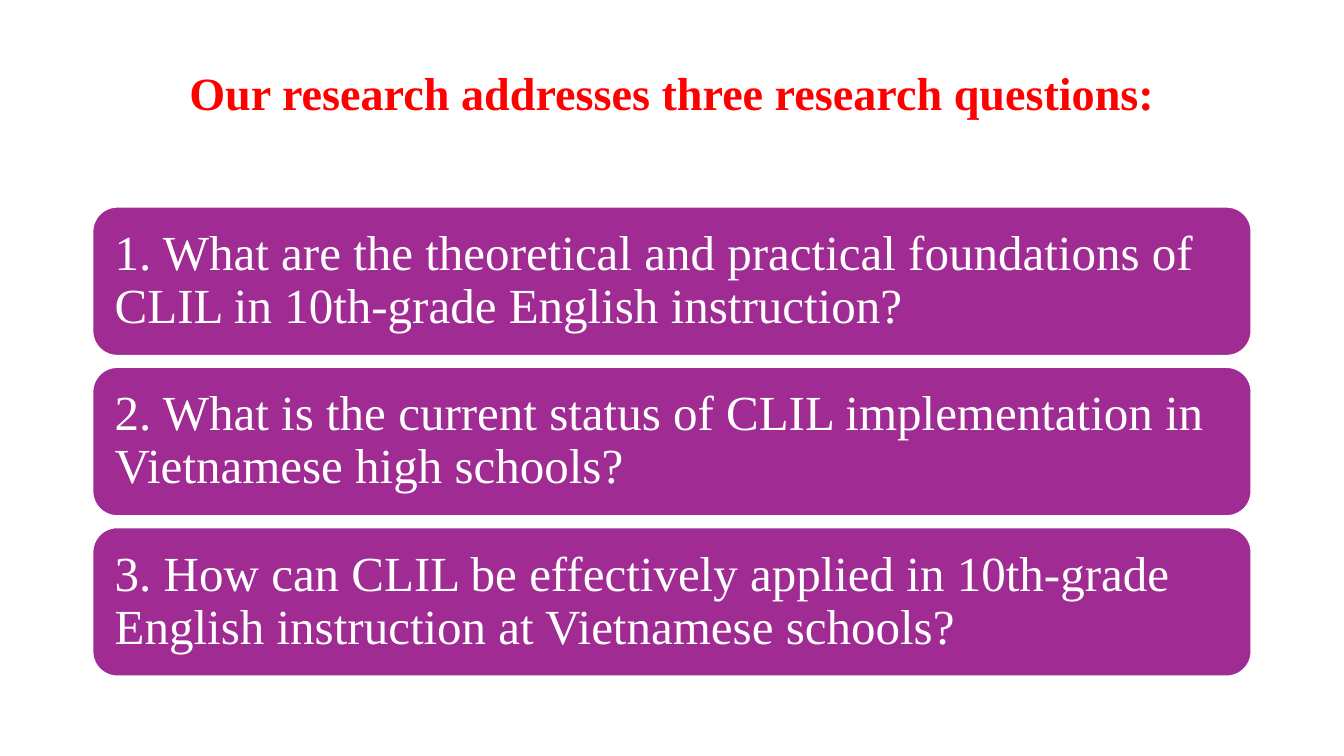
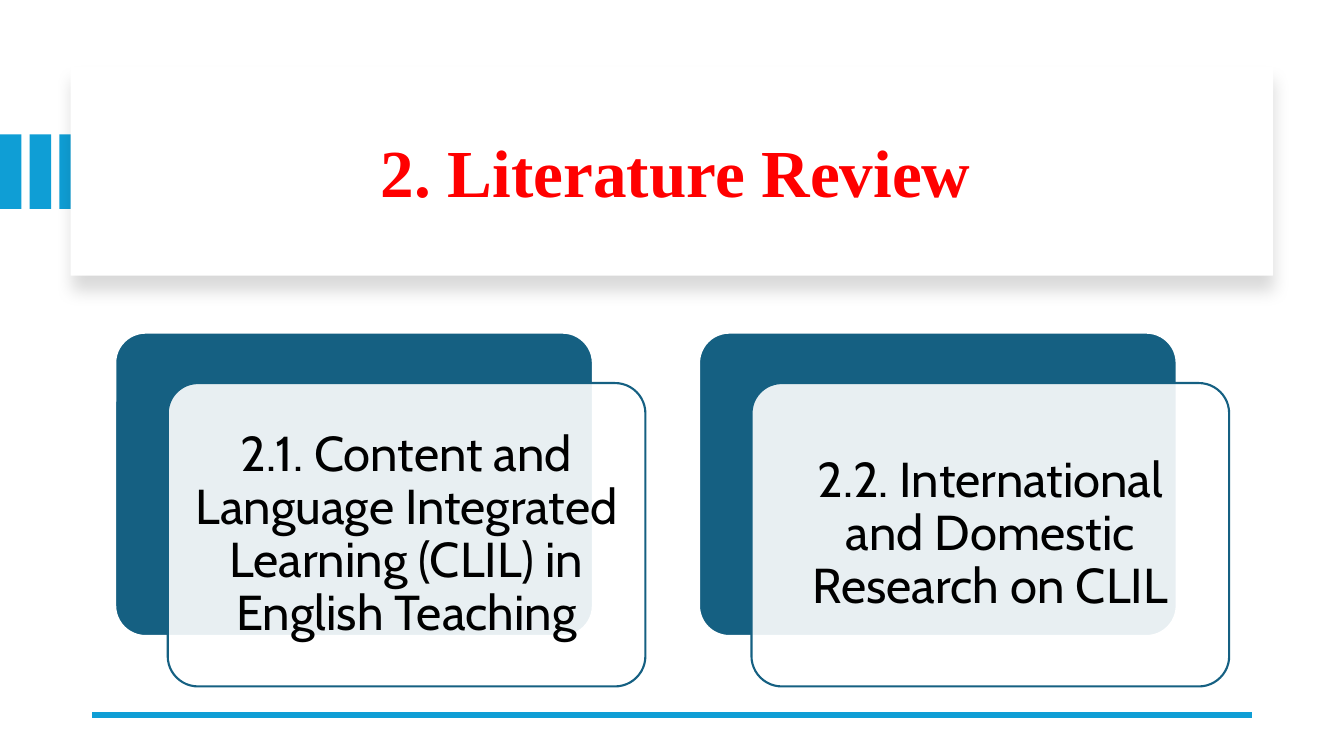
from dataclasses import dataclass
from typing import Any

from lxml import etree
from pptx import Presentation
from pptx.dml.color import RGBColor
from pptx.enum.shapes import MSO_CONNECTOR, MSO_SHAPE
from pptx.enum.text import MSO_ANCHOR, MSO_AUTO_SIZE, PP_ALIGN
from pptx.oxml.ns import qn
from pptx.util import Pt

RECTANGLE = MSO_SHAPE.RECTANGLE
ROUNDED = MSO_SHAPE.ROUNDED_RECTANGLE
STRAIGHT = MSO_CONNECTOR.STRAIGHT
MIDDLE = MSO_ANCHOR.MIDDLE
LEFT, CENTER = PP_ALIGN.LEFT, PP_ALIGN.CENTER
NO_AUTOFIT = MSO_AUTO_SIZE.NONE

WHITE, BLACK, RED = "FFFFFF", "000000", "FF0000"
PURPLE, SKY, TEAL = "A02B93", "0F9ED5", "156082"
SERIF, SANS = "Times New Roman", "Cabin"
TITLE_ONLY = 5
OUTLINE = 1.5
TEXT_INSET = 10.8

QUESTIONS = (
    "1. What are the theoretical and practical foundations of CLIL in 10th-grade English instruction?",
    "2. What is the current status of CLIL implementation in Vietnamese high schools?",
    "3. How can CLIL be effectively applied in 10th-grade English instruction at Vietnamese schools?",
)
TOPICS = (
    "2.1. Content and Language Integrated Learning (CLIL) in English Teaching",
    "2.2. International and Domestic Research on CLIL",
)


@dataclass(frozen=True)
class Box:
    left: float
    top: float
    width: float
    height: float

    def moved(self, right: float = 0, down: float = 0) -> "Box":
        return Box(self.left + right, self.top + down, self.width, self.height)


@dataclass(frozen=True)
class TextStyle:
    font: str
    size: float
    color: str
    bold: bool = False
    alignment: Any = CENTER


TITLE_STYLE = TextStyle(SERIF, 33, RED, bold=True)
SECTION_STYLE = TextStyle(SERIF, 48, RED, bold=True)
QUESTION_STYLE = TextStyle(SERIF, 35, WHITE, alignment=LEFT)
TOPIC_STYLE = TextStyle(SANS, 35, BLACK)

TITLE_BOX = Box(66, 44, 828, 89)
TITLE_RAISE = 40
QUESTION_BOX = Box(66, 147.6, 828, 106.6)
QUESTION_PITCH = 114.5
BAR_BOX = Box(0, 96, 15.3, 53.3)
BAR_COUNT, BAR_PITCH = 3, 21.2
BANNER_BOX = Box(50.4, 48, 859, 149)
SECTION_BOX = Box(82, 64, 801.4, 122.4)
CARD_BOX = Box(82.3, 237.6, 341.2, 216.7)
CARD_PITCH = 417
CARD_RIGHT, CARD_DOWN = 37.5, 36
RULE_LEFT, RULE_RIGHT, RULE_TOP = 66, 894, 510.5


def color(value: str) -> RGBColor:
    return RGBColor.from_string(value)


def apply(target: Any, values: dict[str, Any]) -> None:
    for name, value in values.items():
        setattr(target, name, value)


def place(shape: Any, box: Box) -> None:
    apply(shape, {name: Pt(value) for name, value in vars_of(box).items()})


def vars_of(box: Box) -> dict[str, float]:
    return {"left": box.left, "top": box.top, "width": box.width, "height": box.height}


def write(shape: Any, text: str, style: TextStyle, inset: dict[str, float]) -> None:
    """Fill a shape with one paragraph; inset holds frame margins in points."""
    frame = shape.text_frame
    frame.text = text
    apply(frame, {"word_wrap": True, "auto_size": NO_AUTOFIT, "vertical_anchor": MIDDLE})
    apply(frame, {f"margin_{side}": Pt(value) for side, value in inset.items()})
    paragraph = frame.paragraphs[0]
    apply(paragraph, {"alignment": style.alignment, "line_spacing": 0.9})
    font = paragraph.runs[0].font
    apply(font, {"name": style.font, "size": Pt(style.size), "bold": style.bold})
    font.color.rgb = color(style.color)


def add_title(slide: Any, text: str, box: Box, style: TextStyle, bottom: float = 3.6) -> Any:
    title = slide.shapes.title
    place(title, box)
    write(title, text, style, {"bottom": bottom})
    return title


def add_block(slide: Any, kind: Any, box: Box, fill: str, line: str | None = None) -> Any:
    shape = slide.shapes.add_shape(kind, *(Pt(value) for value in vars_of(box).values()))
    shape.shadow.inherit = False
    shape.fill.solid()
    shape.fill.fore_color.rgb = color(fill)
    if line:
        shape.line.color.rgb = color(line)
        shape.line.width = Pt(OUTLINE)
    else:
        shape.line.fill.background()
    return shape


def add_text_block(slide: Any, box: Box, fill: str, line: str, text: str, style: TextStyle) -> Any:
    shape = add_block(slide, ROUNDED, box, fill, line)
    write(shape, text, style, dict.fromkeys(("left", "top", "right", "bottom"), TEXT_INSET))
    return shape


def set_alpha(color_element: Any, percent: int) -> None:
    etree.SubElement(color_element, qn("a:alpha"), val=str(percent * 1000))


def add_soft_shadow(shape: Any) -> None:
    """Cast a faint black shadow straight down."""
    effects = shape._element.spPr.find(qn("a:effectLst"))
    shadow = etree.SubElement(
        effects, qn("a:outerShdw"), blurRad=str(Pt(11)), dist=str(Pt(10)), dir="5400000", rotWithShape="0"
    )
    set_alpha(etree.SubElement(shadow, qn("a:srgbClr"), val=BLACK), 15)


def add_rule(slide: Any) -> None:
    rule = slide.shapes.add_connector(STRAIGHT, Pt(RULE_LEFT), Pt(RULE_TOP), Pt(RULE_RIGHT), Pt(RULE_TOP))
    rule.line.color.rgb = color(SKY)
    rule.line.width = Pt(4.5)
    etree.SubElement(rule._element.spPr, qn("a:effectLst"))


def add_card(slide: Any, box: Box, text: str) -> None:
    """Draw a solid card with a translucent text card offset over it."""
    back = add_block(slide, ROUNDED, box, TEAL, WHITE)
    front = add_text_block(slide, box.moved(CARD_RIGHT, CARD_DOWN), WHITE, TEAL, text, TOPIC_STYLE)
    for shape in (back, front):
        shape.adjustments[0] = 0.1
    set_alpha(front._element.spPr.find(qn("a:solidFill"))[0], 90)


def build_questions(slide: Any) -> None:
    add_title(
        slide, "Our research addresses three research questions:", TITLE_BOX, TITLE_STYLE, bottom=3.6 + TITLE_RAISE
    )
    for index, question in enumerate(QUESTIONS):
        box = QUESTION_BOX.moved(down=index * QUESTION_PITCH)
        add_text_block(slide, box, PURPLE, WHITE, question, QUESTION_STYLE)


def build_review(slide: Any) -> None:
    for index in range(BAR_COUNT):
        add_block(slide, RECTANGLE, BAR_BOX.moved(right=index * BAR_PITCH), SKY)
    banner = add_block(slide, RECTANGLE, BANNER_BOX, WHITE)
    add_soft_shadow(banner)
    title = add_title(slide, "2. Literature Review", SECTION_BOX, SECTION_STYLE)
    banner._element.addnext(title._element)
    add_rule(slide)
    for index, topic in enumerate(TOPICS):
        add_card(slide, CARD_BOX.moved(right=index * CARD_PITCH), topic)


def main() -> None:
    presentation = Presentation()
    apply(presentation, {"slide_width": Pt(960), "slide_height": Pt(540)})
    for build in (build_questions, build_review):
        build(presentation.slides.add_slide(presentation.slide_layouts[TITLE_ONLY]))
    presentation.save("out.pptx")


if __name__ == "__main__":
    main()
